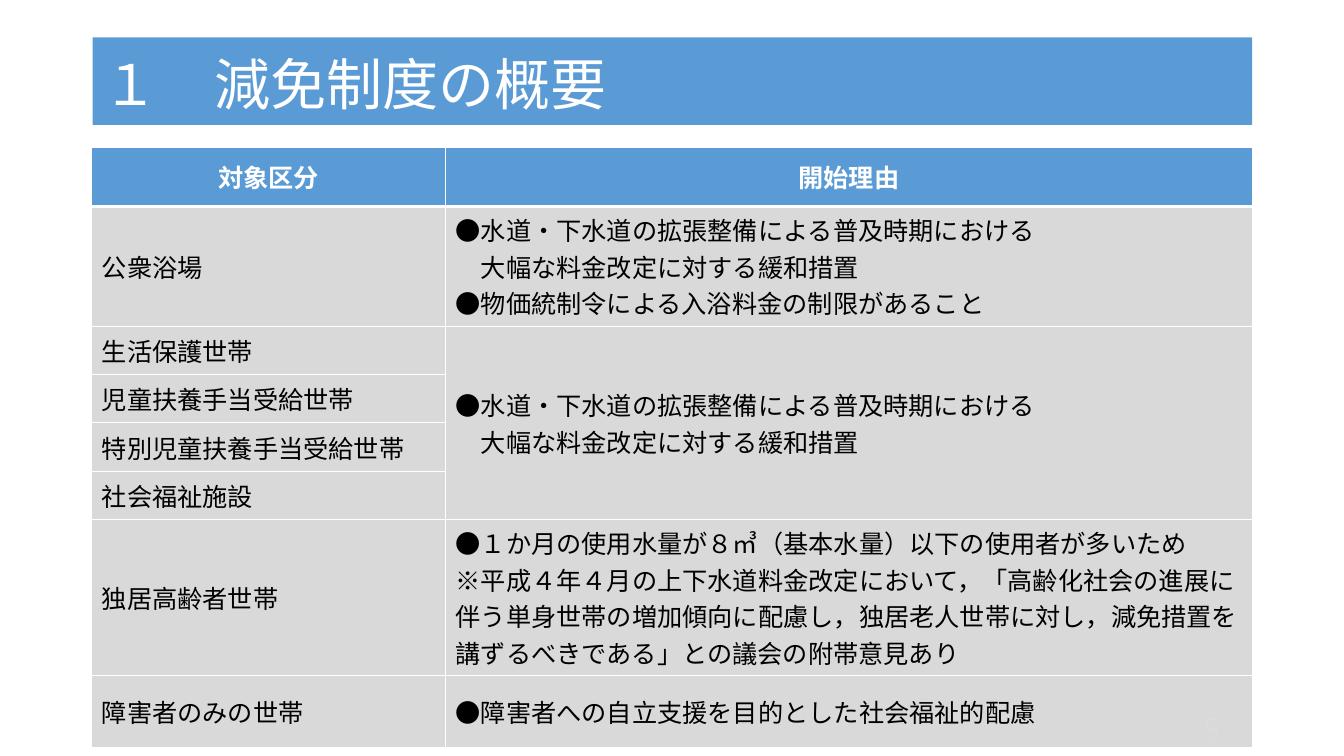
"""Build the slide that outlines the water charge reduction scheme."""
from dataclasses import dataclass

from lxml.etree import SubElement
from pptx import Presentation
from pptx.dml.color import RGBColor
from pptx.enum.shapes import MSO_SHAPE
from pptx.enum.text import MSO_ANCHOR as Anchor, PP_ALIGN as Align
from pptx.oxml import parse_xml
from pptx.oxml.ns import nsdecls, qn
from pptx.util import Inches, Pt

COLORS = {"blue": "5B9BD5", "gray": "D9D9D9", "pale": "DBDBDB",
          "white": "FFFFFF", "black": "000000"}
JAPANESE = "Noto Sans CJK JP"
COLUMN_WIDTHS = (3.51, 8)
HEADINGS = ("対象区分", "開始理由")
HEADING_HEIGHT = 0.59
THIN, THICK = 1, 3
EXPANSION = ("●水道・下水道の拡張整備による普及時期における",
             "\u3000大幅な料金改定に対する緩和措置".replace("\u3000", "　"))


@dataclass(frozen=True)
class Category:
    """One reduction category; no reasons means it shares those above."""
    name: str
    height: float
    reasons: tuple[str, ...] = ()


CATEGORIES = (
    Category("公衆浴場", 0.71, EXPANSION + ("●物価統制令による入浴料金の制限があること",)),
    Category("生活保護世帯", 0.48, EXPANSION),
    Category("児童扶養手当受給世帯", 0.48),
    Category("特別児童扶養手当受給世帯", 0.48),
    Category("社会福祉施設", 0.48),
    Category("独居高齢者世帯", 0.71, (
        "●１か月の使用水量が８㎥（基本水量）以下の使用者が多いため",
        "※平成４年４月の上下水道料金改定において，「高齢化社会の進展に"
        "伴う単身世帯の増加傾向に配慮し，独居老人世帯に対し，減免措置を"
        "講ずるべきである」との議会の附帯意見あり")),
    Category("障害者のみの世帯", 0.71, ("●障害者への自立支援を目的とした社会福祉的配慮",)),
)


def rgb(name: str) -> RGBColor:
    """Look up a named colour."""
    return RGBColor.from_string(COLORS[name])


def write(frame, lines: tuple[str, ...], *, size: float = 18, color: str = "black",
          font: str = JAPANESE, bold: bool = False, align=Align.LEFT,
          spacing: float = 1.0) -> None:
    """Write one formatted paragraph per line."""
    frame.word_wrap = True
    for index, line in enumerate(lines):
        paragraph = frame.add_paragraph() if index else frame.paragraphs[0]
        paragraph.alignment = align
        paragraph.line_spacing = spacing
        run = paragraph.add_run()
        run.text = line
        run.font.size = Pt(size)
        run.font.bold = bold
        run.font.color.rgb = rgb(color)
        run.font.name = font
        SubElement(run.font._element, qn("a:ea"), typeface=font)


def style_cell(cell, fill: str, top: float = THIN, bottom: float = THIN) -> None:
    """Fill a cell and give it white borders."""
    cell.vertical_anchor = Anchor.MIDDLE
    cell.fill.solid()
    cell.fill.fore_color.rgb = rgb(fill)
    properties = cell._tc.get_or_add_tcPr()
    widths = {"lnL": THIN, "lnR": THIN, "lnT": top, "lnB": bottom}
    for position, (side, width) in enumerate(widths.items()):
        properties.insert(position, parse_xml(
            f'<a:{side} {nsdecls("a")} w="{Pt(width)}"><a:solidFill>'
            f'<a:srgbClr val="{COLORS["white"]}"/></a:solidFill></a:{side}>'))


def add_title(slide) -> None:
    """Draw the title band."""
    title = slide.shapes.add_shape(MSO_SHAPE.RECTANGLE, Inches(0.92), Inches(0.37),
                                   Inches(11.5), Inches(0.87))
    title.shadow.inherit = False
    title.fill.solid()
    title.fill.fore_color.rgb = rgb("blue")
    title.line.fill.background()
    frame = title.text_frame
    frame.vertical_anchor = Anchor.MIDDLE
    frame.margin_top, frame.margin_bottom = Inches(0.17), Inches(0.04)
    write(frame, ("１　減免制度の概要",), size=40, color="white", spacing=0.9)


def add_categories(slide) -> None:
    """Draw the table of categories and reasons."""
    heights = [HEADING_HEIGHT] + [category.height for category in CATEGORIES]
    table = slide.shapes.add_table(
        len(heights), len(COLUMN_WIDTHS), Inches(0.91), Inches(1.46),
        Inches(sum(COLUMN_WIDTHS)), Inches(sum(heights))).table
    for column, width in zip(table.columns, COLUMN_WIDTHS):
        column.width = Inches(width)
    for row, height in zip(table.rows, heights):
        row.height = Inches(height)
    for column, heading in enumerate(HEADINGS):
        cell = table.cell(0, column)
        style_cell(cell, "blue", bottom=THICK)
        write(cell.text_frame, (heading,), color="white", bold=True, align=Align.CENTER)
    reason_row = 1
    for row, category in enumerate(CATEGORIES, start=1):
        name, reason = table.cell(row, 0), table.cell(row, 1)
        for cell in (name, reason):
            style_cell(cell, "gray", top=THICK if row == 1 else THIN)
        write(name.text_frame, (category.name,))
        if category.reasons:
            reason_row = row
            write(reason.text_frame, category.reasons)
        elif row == len(CATEGORIES) or CATEGORIES[row].reasons:
            table.cell(reason_row, 1).merge(reason)


def add_page_number(slide) -> None:
    """Draw the page number."""
    number = slide.shapes.add_textbox(Inches(9.21), Inches(7.02), Inches(3), Inches(0.4))
    number.text_frame.vertical_anchor = Anchor.MIDDLE
    write(number.text_frame, ("5",), size=28, color="pale", font="Calibri",
          align=Align.RIGHT)


def main() -> None:
    """Build and save the presentation."""
    deck = Presentation()
    deck.slide_width, deck.slide_height = Inches(13.33), Inches(7.5)
    slide = deck.slides.add_slide(deck.slide_layouts[6])
    add_title(slide)
    add_categories(slide)
    add_page_number(slide)
    deck.save("out.pptx")


if __name__ == "__main__":
    main()
